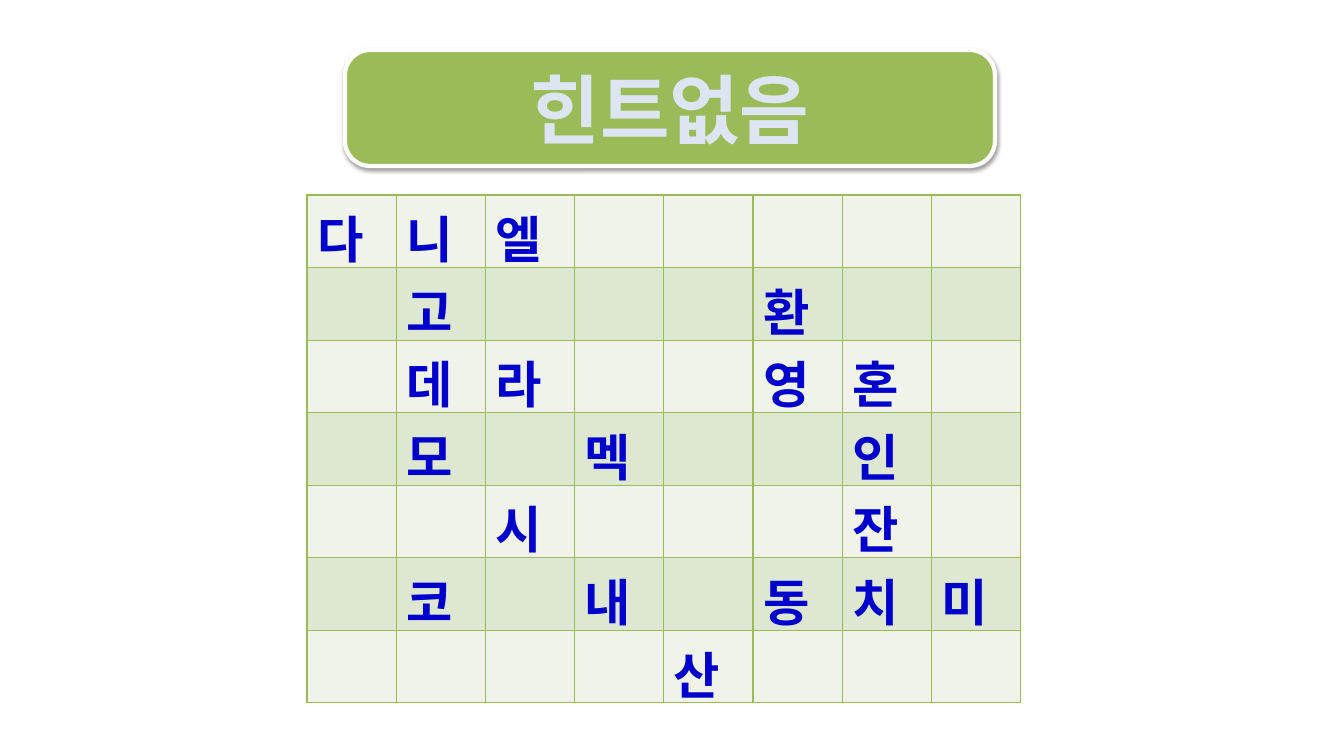
from lxml import etree
from pptx import Presentation
from pptx.dml.color import RGBColor
from pptx.enum.shapes import MSO_SHAPE
from pptx.enum.text import MSO_ANCHOR, PP_ALIGN
from pptx.oxml import parse_xml
from pptx.oxml.ns import qn
from pptx.util import Emu, Pt

TITLE = "힌트없음"
PUZZLE = [
    ["다", "니", "엘", "", "", "", "", ""],
    ["", "고", "", "", "", "환", "", ""],
    ["", "데", "라", "", "", "영", "혼", ""],
    ["", "모", "", "멕", "", "", "인", ""],
    ["", "", "시", "", "", "", "잔", ""],
    ["", "코", "", "내", "", "동", "치", "미"],
    ["", "", "", "", "산", "", "", ""],
]

GREEN = RGBColor(0x9B, 0xBB, 0x59)
BANDS = [RGBColor(0xEF, 0xF3, 0xEA), RGBColor(0xDE, 0xE7, 0xD1)]
LETTER_BLUE = RGBColor(0x00, 0x00, 0xCC)
TITLE_BLUE = RGBColor(0x4F, 0x81, 0xBD)
TITLE_PALE = RGBColor(0xDC, 0xE6, 0xF2)
WHITE = RGBColor(0xFF, 0xFF, 0xFF)
ROUNDED = MSO_SHAPE.ROUNDED_RECTANGLE
MIDDLE = MSO_ANCHOR.MIDDLE
CENTER = PP_ALIGN.CENTER

KOREAN_FONT = "Noto Sans CJK KR"
TITLE_FONT = "Cambria"
GRID = (307, 195, 714, 508)
BANNER = (345, 50, 650, 116)
CELL_TOP, CELL_BOTTOM = 5, -6
NS = 'xmlns:a="http://schemas.openxmlformats.org/drawingml/2006/main"'


def px(value):
    return Emu(round(value * 914400 / 100.8))


def solid(color):
    return f'<a:solidFill><a:srgbClr val="{color}"/></a:solidFill>'


def style_span(span, size, font):
    span.font.size = Pt(size)
    span.font.bold = True
    span.font.name = font
    east_asian = etree.SubElement(span.font._element, qn("a:ea"))
    east_asian.set("typeface", KOREAN_FONT)


def add_borders(cell):
    properties = cell._tc.get_or_add_tcPr()
    for index, side in enumerate(("lnL", "lnR", "lnT", "lnB")):
        border = parse_xml(f'<a:{side} {NS} w="12700">{solid(GREEN)}</a:{side}>')
        properties.insert(index, border)


def add_puzzle(page):
    left, top, width, height = map(px, GRID)
    table = page.shapes.add_table(len(PUZZLE), len(PUZZLE[0]), left, top, width, height).table
    for column in table.columns:
        column.width = width // len(PUZZLE[0])
    for row in table.rows:
        row.height = height // len(PUZZLE)
    for row_index, letters in enumerate(PUZZLE):
        for column_index, letter in enumerate(letters):
            cell = table.cell(row_index, column_index)
            cell.fill.solid()
            cell.fill.fore_color.rgb = BANDS[row_index % 2]
            cell.vertical_anchor = MIDDLE
            cell.margin_top, cell.margin_bottom = px(CELL_TOP), px(CELL_BOTTOM)
            add_borders(cell)
            if letter:
                cell.text_frame.text = letter
                span = cell.text_frame.paragraphs[0].runs[0]
                style_span(span, 36, KOREAN_FONT)
                span.font.color.rgb = LETTER_BLUE


def add_banner(page):
    banner = page.shapes.add_shape(ROUNDED, *map(px, BANNER))
    banner.adjustments[0] = 0.216
    banner.fill.solid()
    banner.fill.fore_color.rgb = GREEN
    banner.line.color.rgb = WHITE
    banner.line.width = Pt(3)
    banner._element.spPr.append(parse_xml(
        f'<a:effectLst {NS}><a:outerShdw blurRad="40000" dist="20000" dir="5400000" '
        'rotWithShape="0"><a:srgbClr val="000000"><a:alpha val="38000"/></a:srgbClr>'
        '</a:outerShdw></a:effectLst>'))
    banner.text_frame.text = TITLE
    banner.text_frame.vertical_anchor = MIDDLE
    para = banner.text_frame.paragraphs[0]
    para.alignment = CENTER
    span = para.runs[0]
    style_span(span, 54, TITLE_FONT)
    outline = parse_xml(f'<a:ln {NS} w="12700">{solid(TITLE_BLUE)}</a:ln>')
    pattern = parse_xml(
        f'<a:pattFill {NS} prst="pct50"><a:fgClr><a:srgbClr val="{TITLE_BLUE}"/></a:fgClr>'
        f'<a:bgClr><a:srgbClr val="{TITLE_PALE}"/></a:bgClr></a:pattFill>')
    span.font._element.insert(0, outline)
    span.font._element.insert(1, pattern)


def main():
    deck = Presentation()
    deck.slide_width, deck.slide_height = px(1344), px(756)
    page = deck.slides.add_slide(deck.slide_layouts[6])
    add_puzzle(page)
    add_banner(page)
    deck.save("out.pptx")


if __name__ == "__main__":
    main()
